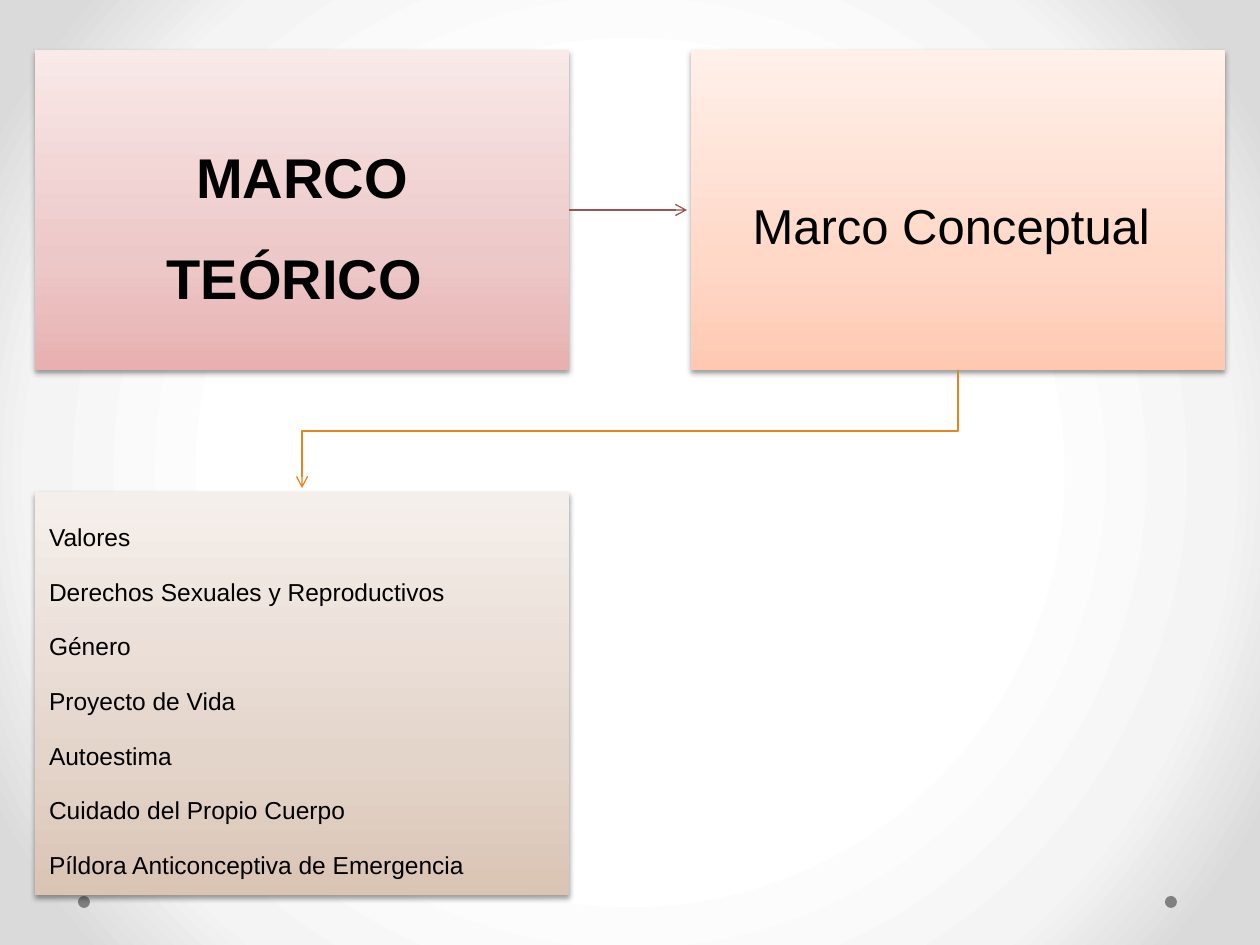
from lxml.etree import SubElement
from pptx import Presentation
from pptx.dml.color import RGBColor
from pptx.enum.shapes import MSO_CONNECTOR as Connector, MSO_SHAPE as Shape
from pptx.enum.text import MSO_ANCHOR as Anchor, PP_ALIGN as Align
from pptx.oxml import parse_xml
from pptx.oxml.ns import nsdecls, qn
from pptx.util import Emu, Pt

SCALE = 914400 / 126  # EMU per px
FONT = "Arial"
COLORS = {
    "text": "000000", "shadow": "000000", "dot": "808080",
    "straight": "9C5252", "elbow": "E68422",
}
BACKGROUND = [(50, "FFFFFF"), (76, "F4F4F4"), (92, "DADADA")]
GRADIENTS = {
    "theory": [(0, "E8B0B0"), (35, "EDC8C8"), (100, "F9E9E9")],
    "concept": [(0, "FFC9B1"), (35, "FFD8C8"), (100, "FFF0EA")],
    "topics": [(0, "DAC4B4"), (35, "E4D5CB"), (100, "F5EFEB")],
}
TOPICS = [
    "Valores", "Derechos Sexuales y Reproductivos", "Género",
    "Proyecto de Vida", "Autoestima", "Cuidado del Propio Cuerpo",
    "Píldora Anticonceptiva de Emergencia",
]

# Grid of boxes
LEFT, TOP, BOX_WIDTH, GAP = 35, 50, 534, 122
HEAD_HEIGHT, LIST_HEIGHT = 320, 403
RIGHT = LEFT + BOX_WIDTH + GAP
LIST_TOP = TOP + HEAD_HEIGHT + GAP
ARROW_GAP = 4


def px(value):
    return Emu(round(value * SCALE))


def rgb(name):
    return RGBColor.from_string(COLORS[name])


def gradient_xml(stops, direction):
    stop_xml = "".join(
        f'<a:gs pos="{position * 1000}"><a:srgbClr val="{color}"/></a:gs>'
        for position, color in stops)
    return (f'<a:gradFill {nsdecls("a")} rotWithShape="1">'
            f'<a:gsLst>{stop_xml}</a:gsLst>{direction}</a:gradFill>')


def set_background(slide):
    direction = ('<a:path path="circle"><a:fillToRect l="50000" t="50000" '
                 'r="50000" b="50000"/></a:path>')
    background = parse_xml(
        f'<p:bg {nsdecls("p", "a")}><p:bgPr>{gradient_xml(BACKGROUND, direction)}'
        '<a:effectLst/></p:bgPr></p:bg>')
    slide.element.cSld.insert(0, background)


def add_dot(slide, left, top, size):
    dot = slide.shapes.add_shape(Shape.OVAL, px(left), px(top), px(size), px(size))
    dot.shadow.inherit = False
    dot.fill.solid()
    dot.fill.fore_color.rgb = rgb("dot")
    dot.line.fill.background()


def add_box(slide, box, stops, lines, size, inset, align=Align.CENTER, bold=False):
    shape = slide.shapes.add_shape(Shape.RECTANGLE, *map(px, box))
    shape.line.fill.background()

    # Vertical gradient and soft shadow
    properties = shape.element.spPr
    gradient = parse_xml(gradient_xml(stops, '<a:lin ang="16200000" scaled="1"/>'))
    properties.insert(list(properties).index(properties.find(qn("a:ln"))), gradient)
    properties.append(parse_xml(
        f'<a:effectLst {nsdecls("a")}><a:outerShdw blurRad="{Pt(3.1)}" '
        f'dist="{Pt(1.6)}" dir="5400000" rotWithShape="0">'
        f'<a:srgbClr val="{COLORS["shadow"]}"><a:alpha val="38000"/></a:srgbClr>'
        '</a:outerShdw></a:effectLst>'))

    # Text
    frame = shape.text_frame
    frame.word_wrap = True
    frame.vertical_anchor = Anchor.MIDDLE
    frame.margin_left = frame.margin_right = px(inset)
    frame.margin_top = frame.margin_bottom = px(inset)
    frame.text = "\n".join(lines)
    for paragraph in frame.paragraphs:
        paragraph.alignment = align
        paragraph.line_spacing = 1.5
        paragraph.space_after = Pt(round(size * 0.42))
        paragraph.font.name = FONT
        paragraph.font.size = Pt(size)
        paragraph.font.bold = bold
        paragraph.font.color.rgb = rgb("text")
    return shape


def add_arrow(slide, kind, begin, end, color):
    arrow = slide.shapes.add_connector(kind, *map(px, (*begin, *end)))
    arrow.line.color.rgb = rgb(color)
    arrow.line.width = Pt(0.75)
    SubElement(arrow.line._get_or_add_ln(), qn("a:tailEnd"), type="arrow")
    SubElement(arrow._element.spPr, qn("a:effectLst"))
    return arrow


def add_down_elbow(slide, begin, end, color):
    """Elbow that leaves downwards: a sideways elbow turned a quarter."""
    center_x, center_y = (begin[0] + end[0]) / 2, (begin[1] + end[1]) / 2
    half_width, half_height = (end[1] - begin[1]) / 2, (begin[0] - end[0]) / 2
    elbow = add_arrow(slide, Connector.ELBOW,
                      (center_x - half_width, center_y - half_height),
                      (center_x + half_width, center_y + half_height), color)
    properties = elbow._element.spPr
    properties.find(qn("a:xfrm")).set("rot", "5400000")
    # Bend halfway between the two rows of boxes
    bend = round(GAP / 2 / (end[1] - begin[1]) * 100000)
    guides = properties.find(qn("a:prstGeom")).get_or_add_avLst()
    SubElement(guides, qn("a:gd"), name="adj1", fmla=f"val {bend}")


def add_diagram(slide):
    theory = add_box(slide, (LEFT, TOP, BOX_WIDTH, HEAD_HEIGHT), GRADIENTS["theory"],
                     ["MARCO TEÓRICO "], 32, 32, bold=True)
    add_box(slide, (RIGHT, TOP, BOX_WIDTH, HEAD_HEIGHT), GRADIENTS["concept"],
            ["Marco Conceptual "], 28, 28)
    add_box(slide, (LEFT, LIST_TOP, BOX_WIDTH, LIST_HEIGHT), GRADIENTS["topics"],
            TOPICS, 14, 14, align=Align.JUSTIFY)

    # Arrows
    middle = TOP + HEAD_HEIGHT // 2
    straight = add_arrow(slide, Connector.STRAIGHT, (LEFT + BOX_WIDTH, middle),
                         (RIGHT - ARROW_GAP, middle), "straight")
    straight.begin_connect(theory, 3)
    add_down_elbow(slide, (RIGHT + BOX_WIDTH // 2, TOP + HEAD_HEIGHT),
                   (LEFT + BOX_WIDTH // 2, LIST_TOP - ARROW_GAP), "elbow")


def main():
    presentation = Presentation()
    presentation.slide_width, presentation.slide_height = px(1260), px(945)
    slide = presentation.slides.add_slide(presentation.slide_layouts[6])
    set_background(slide)
    for left in (1165, 78):
        add_dot(slide, left, 896, 12)
    add_diagram(slide)
    presentation.save("out.pptx")


if __name__ == "__main__":
    main()
